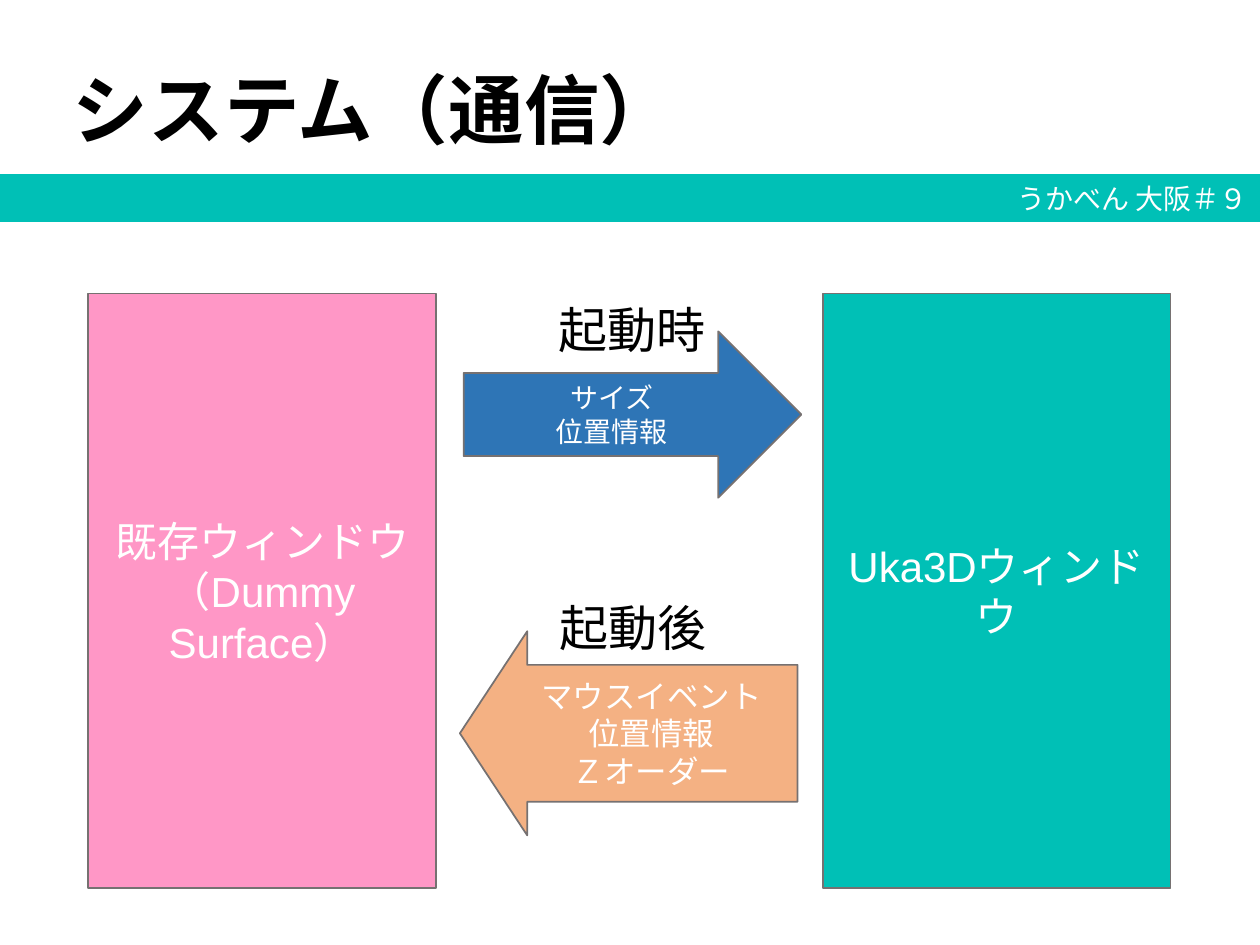
from dataclasses import dataclass

from pptx import Presentation
from pptx import util as u
from pptx.dml.color import RGBColor
from pptx.enum import shapes, text

TEAL = RGBColor(0x00, 0xC0, 0xB6)
PINK = RGBColor(0xFF, 0x97, 0xC6)
BLUE = RGBColor(0x2E, 0x75, 0xB6)
ORANGE = RGBColor(0xF4, 0xB1, 0x83)
GRAY = RGBColor(0x76, 0x71, 0x71)
WHITE = RGBColor(0xFF, 0xFF, 0xFF)
BLACK = RGBColor(0x00, 0x00, 0x00)

KIND = shapes.MSO_SHAPE
ALIGN = text.PP_ALIGN
ANCHOR = text.MSO_ANCHOR


@dataclass
class Label:
    lines: list[str]
    size: float
    color: RGBColor = WHITE
    fonts: tuple[str, ...] = ("Calibri",)  # the last one serves the remaining lines
    align: ALIGN = ALIGN.CENTER
    anchor: ANCHOR = ANCHOR.MIDDLE
    bold: bool = False
    spacing: float | None = None


@dataclass
class Block:
    kind: KIND
    box: tuple[float, float, float, float]
    fill: RGBColor
    label: Label
    line: RGBColor = GRAY
    line_width: float = 1
    adjustments: tuple[float, ...] = ()


def write(s, label: Label) -> None:
    tf = s.text_frame
    tf.word_wrap = True
    tf.vertical_anchor = label.anchor
    tf.text = "\n".join(label.lines)
    for i, p in enumerate(tf.paragraphs):
        p.alignment = label.align
        if label.spacing:
            p.line_spacing = label.spacing
        for r in p.runs:
            r.font.name = label.fonts[min(i, len(label.fonts) - 1)]
            r.font.size = u.Pt(label.size)
            r.font.bold = label.bold
            r.font.color.rgb = label.color


def add_block(sp, block: Block) -> None:
    s = sp.add_shape(block.kind, *map(u.Inches, block.box))
    s.shadow.inherit = False
    s.fill.solid()
    s.fill.fore_color.rgb = block.fill
    s.line.color.rgb = block.line
    s.line.width = u.Pt(block.line_width)
    for i, value in enumerate(block.adjustments):
        s.adjustments[i] = value
    write(s, block.label)


def add_text(sp, box: tuple[float, float, float, float], label: Label) -> None:
    write(sp.add_textbox(*map(u.Inches, box)), label)


WINDOW_TOP, WINDOW_WIDTH, WINDOW_HEIGHT = 2.33, 2.76, 4.72

BLOCKS = [
    Block(KIND.RECTANGLE, (0, 1.39, 10, 0.37), TEAL,
          Label(["うかべん 大阪＃９"], 16, align=ALIGN.RIGHT, anchor=ANCHOR.TOP),
          line=TEAL, line_width=0.75),
    Block(KIND.RECTANGLE, (0.7, WINDOW_TOP, WINDOW_WIDTH, WINDOW_HEIGHT), PINK,
          Label(["既存ウィンドウ", "（Dummy Surface）"], 24, fonts=("Calibri", "Arial"))),
    Block(KIND.RECTANGLE, (6.53, WINDOW_TOP, WINDOW_WIDTH, WINDOW_HEIGHT), TEAL,
          Label(["Uka3Dウィンドウ"], 24, fonts=("Arial",))),
    Block(KIND.RIGHT_ARROW, (3.68, 2.63, 2.68, 1.32), BLUE,
          Label(["サイズ", "位置情報"], 16)),
    Block(KIND.LEFT_ARROW, (3.65, 5.01, 2.68, 1.62), ORANGE,
          Label(["マウスイベント", "位置情報", "Ｚオーダー"], 18),
          adjustments=(0.67, 0.33)),
]

TITLE = Label(["システム（通信）"], 43.2, BLACK, align=ALIGN.LEFT, bold=True, spacing=0.9)
PHASES = [("起動時", 4.19, 2.33), ("起動後", 4.2, 4.69)]


def main() -> None:
    prs = Presentation()
    prs.slide_width, prs.slide_height = u.Inches(10), u.Inches(7.5)
    sp = prs.slides.add_slide(prs.slide_layouts[6]).shapes

    add_text(sp, (0.48, 0.52, 8.8, 0.77), TITLE)
    for block in BLOCKS:
        add_block(sp, block)
    for phase, left, top in PHASES:
        add_text(sp, (left, top, 1.65, 0.57), Label([phase], 28, BLACK, anchor=ANCHOR.TOP))

    prs.save("out.pptx")


if __name__ == "__main__":
    main()
